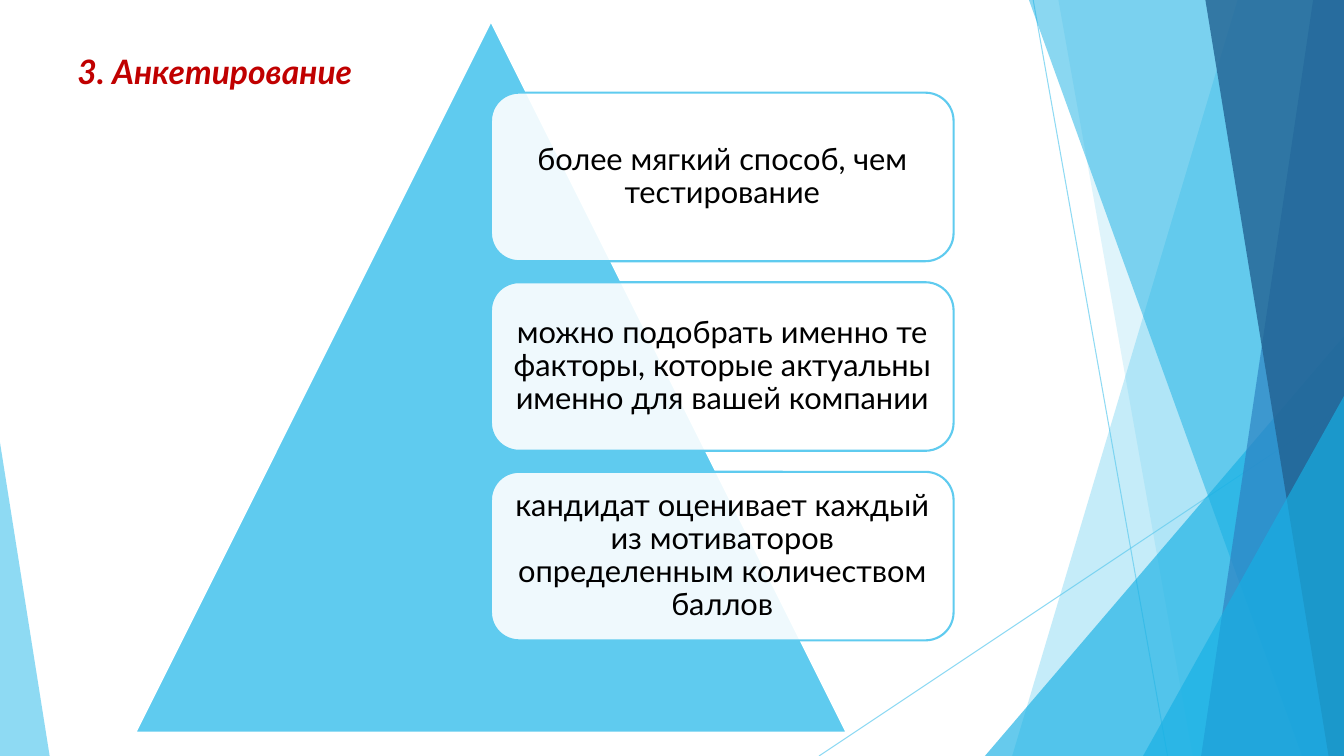
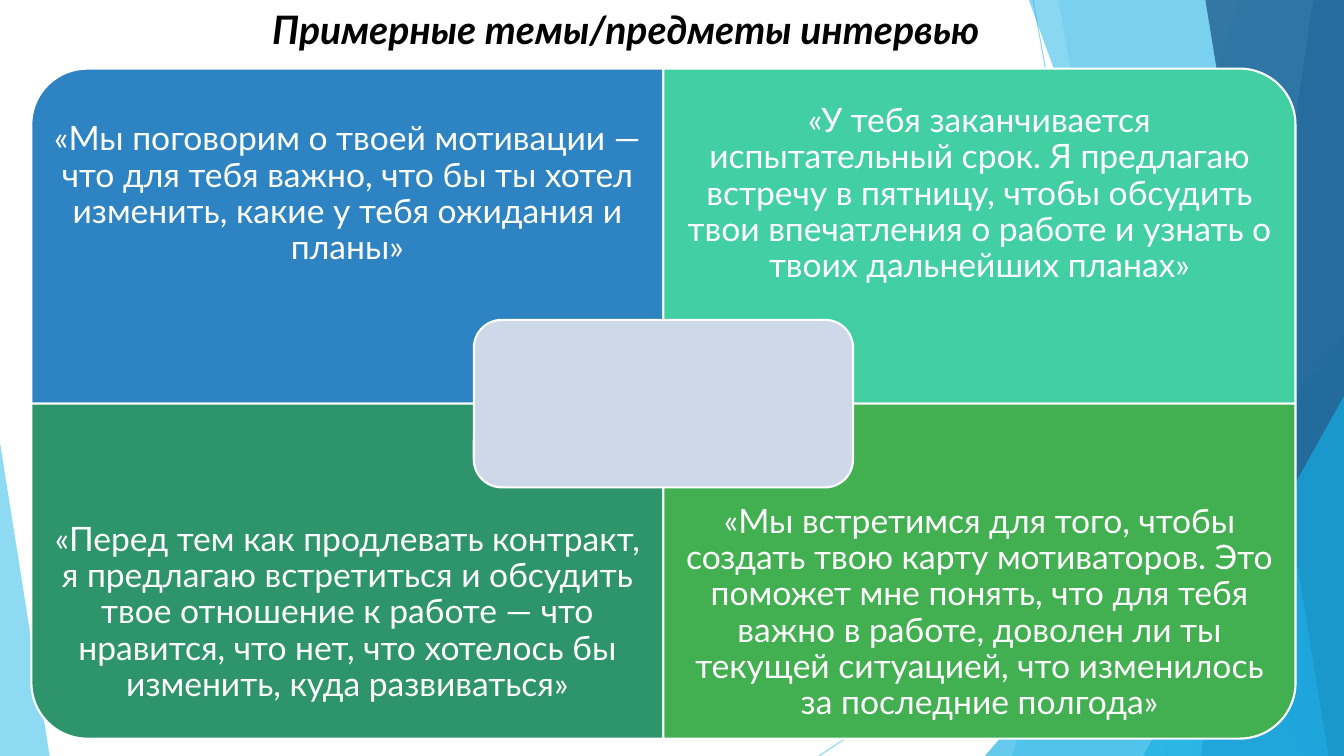
from lxml.etree import SubElement
from pptx import Presentation
from pptx.dml.color import RGBColor
from pptx.enum.shapes import MSO_CONNECTOR, MSO_SHAPE
from pptx.enum.text import MSO_ANCHOR, MSO_AUTO_SIZE, PP_ALIGN
from pptx.oxml.ns import qn
from pptx.util import Pt

PAGE_WIDTH, PAGE_HEIGHT = 960, 540
FONT = "Lato"

WHITE = RGBColor(0xFF, 0xFF, 0xFF)
BLACK = RGBColor(0x00, 0x00, 0x00)
RED = RGBColor(0xC0, 0x00, 0x00)
SKY = RGBColor(0x5F, 0xCB, 0xEF)
CYAN = RGBColor(0x17, 0xB0, 0xE4)
BLUE = RGBColor(0x2E, 0x83, 0xC3)
NAVY = RGBColor(0x22, 0x62, 0x92)
MINT = RGBColor(0x42, 0xD0, 0xA2)
PINE = RGBColor(0x2E, 0x94, 0x6B)
GREEN = RGBColor(0x42, 0xB0, 0x51)
PALE = RGBColor(0xCD, 0xD9, 0xE9)

TITLE_FRAME = {"word_wrap": True, "auto_size": MSO_AUTO_SIZE.NONE,
               "vertical_anchor": MSO_ANCHOR.TOP}
TITLE_FONT = {"name": FONT, "bold": True, "italic": True}
BODY_FRAME = {"word_wrap": True, "vertical_anchor": MSO_ANCHOR.MIDDLE}
BODY_PARA = {"alignment": PP_ALIGN.CENTER, "line_spacing": 0.9}

# Rays: x at the top edge, x at the bottom edge; each reaches the right edge.
# Wedges: left, top, width, height, apex position from 0 (left) to 1 (right).
DECOR = [
    ("ray", (884, 723), SKY, 36),
    ("ray", (756, 852), SKY, 20),
    ("wedge", (703.5, 240, 256.5, 300, 1), CYAN, 66),
    ("ray", (735, 930), CYAN, 50),
    ("ray", (938, 858), BLUE, 70),
    ("ray", (861, 949), NAVY, 80),
    ("wedge", (816.5, 283, 143.5, 257, 1), CYAN, 66),
    ("wedge", (0, 316, 35.5, 224, 0), SKY, 70),
]
DECOR_LINES = [(738, 0, 834, 540), (960, 290, 585, 540)]

CARDS = [
    "более мягкий способ, чем тестирование",
    "можно подобрать именно те факторы, которые актуальны именно для вашей компании",
    "кандидат оценивает каждый из мотиваторов определенным количеством баллов",
]
# Colour, rotation that turns the rounded corner outwards, text; row by row.
QUADRANTS = [
    (BLUE, 270, "«Мы поговорим о твоей мотивации — что для тебя важно, что бы ты "
                "хотел изменить, какие у тебя ожидания и планы»"),
    (MINT, 0, "«У тебя заканчивается испытательный срок. Я предлагаю встречу в "
              "пятницу, чтобы обсудить твои впечатления о работе и узнать о твоих "
              "дальнейших планах»"),
    (PINE, 180, "«Перед тем как продлевать контракт, я предлагаю встретиться и "
                "обсудить твое отношение к работе — что нравится, что нет, что "
                "хотелось бы изменить, куда развиваться»"),
    (GREEN, 90, "«Мы встретимся для того, чтобы создать твою карту мотиваторов. Это "
                "поможет мне понять, что для тебя важно в работе, доволен ли ты "
                "текущей ситуацией, что изменилось за последние полгода»"),
]


def set_format(target, values):
    for name, value in values.items():
        setattr(target, name, value)


def set_opacity(shape, percent):
    for colour in shape.element.spPr.iter(qn("a:srgbClr")):
        SubElement(colour, qn("a:alpha"), val=str(percent * 1000))


def paint(shape, fill, line=None, opacity=100):
    """Fill and outline a shape; the opacity applies to the fill only."""
    shape.shadow.inherit = False
    shape.fill.solid()
    shape.fill.fore_color.rgb = fill
    if opacity < 100:
        set_opacity(shape, opacity)
    if line is None:
        shape.line.fill.background()
    else:
        shape.line.color.rgb = line
        shape.line.width = Pt(1.5)


def add_box(page, kind, box, fill, line=None, opacity=100):
    shape = page.shapes.add_shape(kind, *map(Pt, box))
    paint(shape, fill, line, opacity)
    return shape


def write_body(shape, text, size, colour, inset):
    frame = shape.text_frame
    set_format(frame, BODY_FRAME)
    sides = ("left", "top", "right", "bottom")
    set_format(frame, {f"margin_{side}": Pt(inset) for side in sides})
    para = frame.paragraphs[0]
    set_format(para, BODY_PARA)
    span = para.add_run()
    span.text = text
    set_format(span.font, {"name": FONT, "size": Pt(size)})
    span.font.color.rgb = colour


def write_title(page, text, box, size, colour):
    title = page.shapes.title
    set_format(title, dict(zip(("left", "top", "width", "height"), map(Pt, box))))
    set_format(title.text_frame, TITLE_FRAME)
    para = title.text_frame.paragraphs[0]
    para.alignment = PP_ALIGN.LEFT
    span = para.add_run()
    span.text = text
    set_format(span.font, {**TITLE_FONT, "size": Pt(size)})
    span.font.color.rgb = colour


def add_decor_line(page, ends):
    line = page.shapes.add_connector(MSO_CONNECTOR.STRAIGHT, *map(Pt, ends))
    line.line.color.rgb = SKY
    line.line.width = Pt(0.75)
    set_opacity(line, 70)
    SubElement(line.element.spPr, qn("a:effectLst"))
    return line


def add_ray(page, edge, colour, opacity):
    top_x, bottom_x = edge
    outline = page.shapes.build_freeform(Pt(top_x), 0)
    corners = [(PAGE_WIDTH, 0), (PAGE_WIDTH, PAGE_HEIGHT), (bottom_x, PAGE_HEIGHT)]
    outline.add_line_segments([(Pt(x), Pt(y)) for x, y in corners], close=True)
    ray = outline.convert_to_shape()
    paint(ray, colour, opacity=opacity)
    return ray


def add_wedge(page, place, colour, opacity):
    *box, apex = place
    wedge = add_box(page, MSO_SHAPE.ISOSCELES_TRIANGLE, box, colour, opacity=opacity)
    wedge.adjustments[0] = apex
    return wedge


def move_decor_to_layout(page):
    """Draw the shared decoration on a page and hand it over to its layout."""
    layout = page.slide_layout
    for holder in list(layout.placeholders)[1:]:
        layout.shapes.element.remove(holder.element)
    parts = [add_decor_line(page, ends) for ends in DECOR_LINES]
    builders = {"ray": add_ray, "wedge": add_wedge}
    parts += [builders[kind](page, *values) for kind, *values in DECOR]
    for part in parts:
        layout.shapes.element.append(part.element)


def add_pyramid_list(page, box, texts):
    """Triangle with a column of cards starting on its vertical axis."""
    left, top, width, height = box
    add_box(page, MSO_SHAPE.ISOSCELES_TRIANGLE, box, SKY, WHITE)
    card_height, gap = 120.4, 15
    for index, text in enumerate(texts):
        card_top = top + 51.2 + index * (card_height + gap)
        card_box = (left + width / 2, card_top, 0.65 * width, card_height)
        card = add_box(page, MSO_SHAPE.ROUNDED_RECTANGLE, card_box, WHITE, SKY, 90)
        write_body(card, text, 22, BLACK, 6.6)


def add_matrix(page, box, quadrants):
    """Two by two field with an empty plate over its centre."""
    left, top, width, height = box
    cell_width, cell_height = width / 2, height / 2
    text_height = 0.75 * cell_height
    labels = []
    for index, (colour, rotation, text) in enumerate(quadrants):
        row, column = divmod(index, 2)
        x, y = left + column * cell_width, top + row * cell_height
        shape_box = (x, y, cell_width, cell_height)
        if rotation % 180:
            shift = (cell_width - cell_height) / 2
            shape_box = (x + shift, y - shift, cell_height, cell_width)
        cell = add_box(page, MSO_SHAPE.ROUND_1_RECTANGLE, shape_box, colour, WHITE)
        cell.rotation = rotation
        text_top = y + row * (cell_height - text_height)
        labels.append((text, (x, text_top, cell_width, text_height)))
    for text, label_box in labels:
        label = page.shapes.add_textbox(*map(Pt, label_box))
        write_body(label, text, 24, WHITE, 13.4)
    plate_width, plate_height = 0.3 * width, cell_height / 2
    plate_box = (left + (width - plate_width) / 2, top + (height - plate_height) / 2,
                 plate_width, plate_height)
    add_box(page, MSO_SHAPE.ROUNDED_RECTANGLE, plate_box, PALE, WHITE)


def main():
    deck = Presentation()
    deck.slide_width, deck.slide_height = Pt(PAGE_WIDTH), Pt(PAGE_HEIGHT)
    layout = deck.slide_layouts.get_by_name("Title Only")

    survey = deck.slides.add_slide(layout)
    move_decor_to_layout(survey)
    write_title(survey, "3. Анкетирование", (48, 32.4, 233, 36), 24, RED)
    add_pyramid_list(survey, (96.5, 15, 508.4, 508.4), CARDS)

    interview = deck.slides.add_slide(layout)
    write_title(interview, "Примерные темы/предметы интервью", (187.2, 0, 574, 41),
                28, BLACK)
    add_matrix(interview, (22.4, 49, 903, 478.6), QUADRANTS)

    deck.save("out.pptx")


if __name__ == "__main__":
    main()
